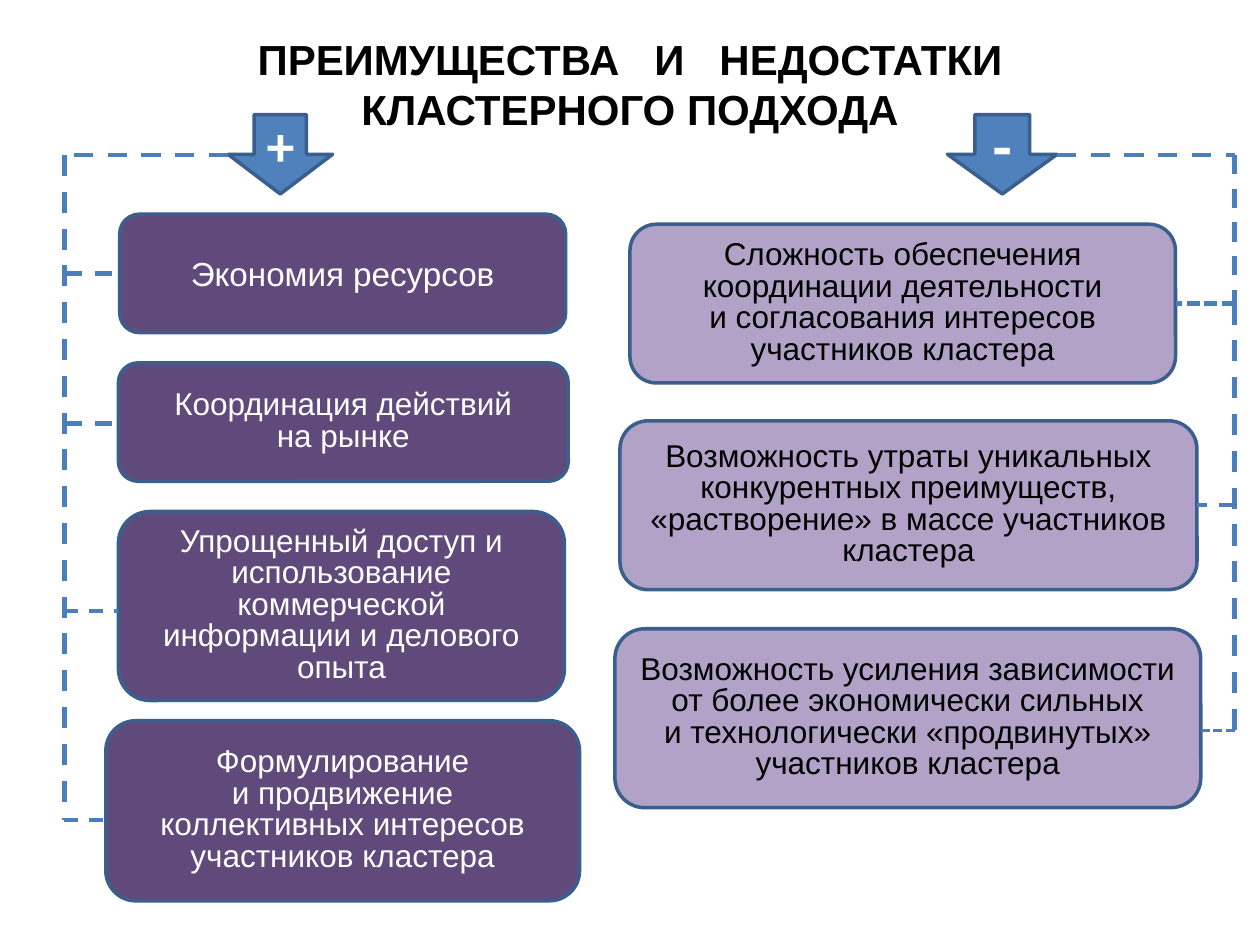
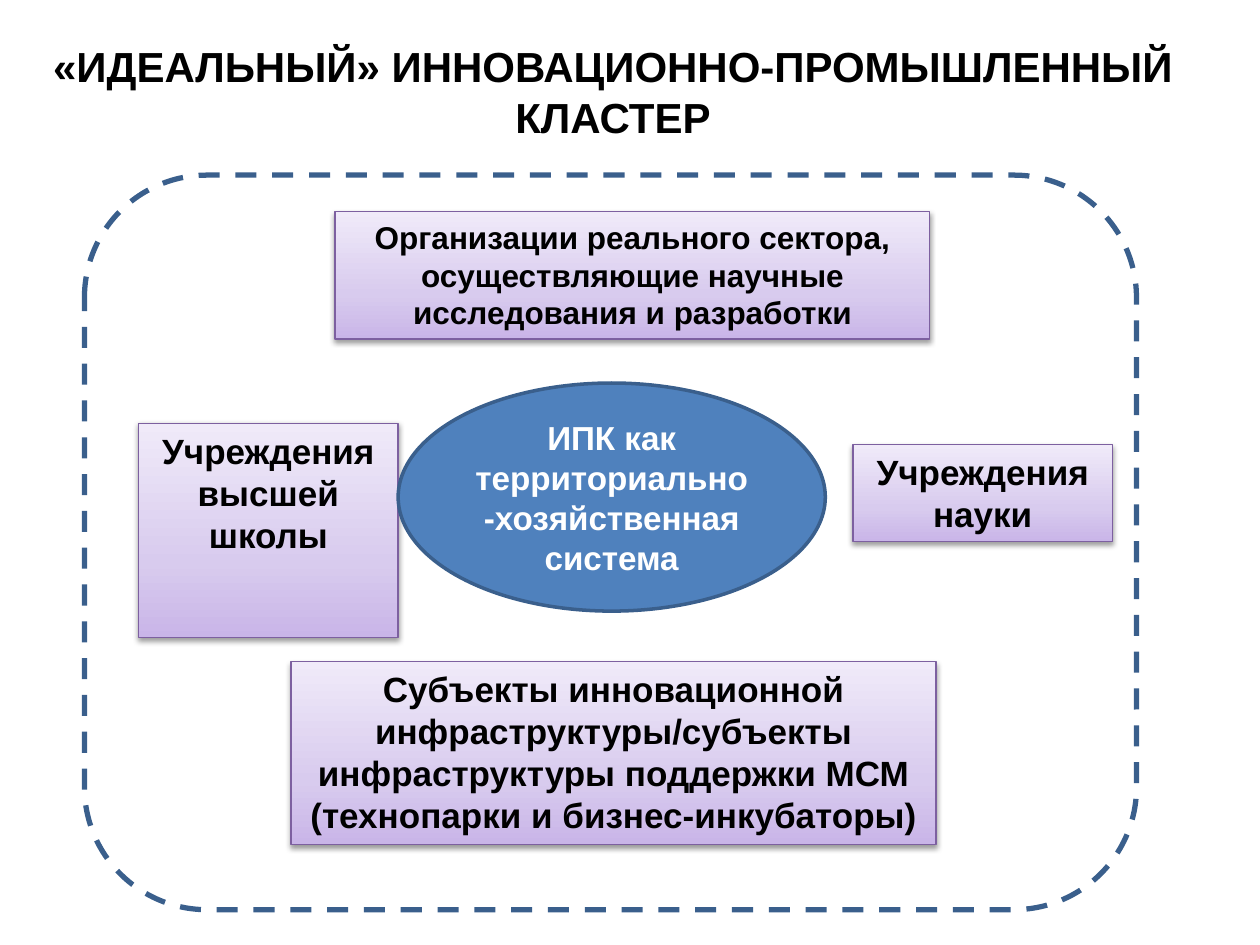
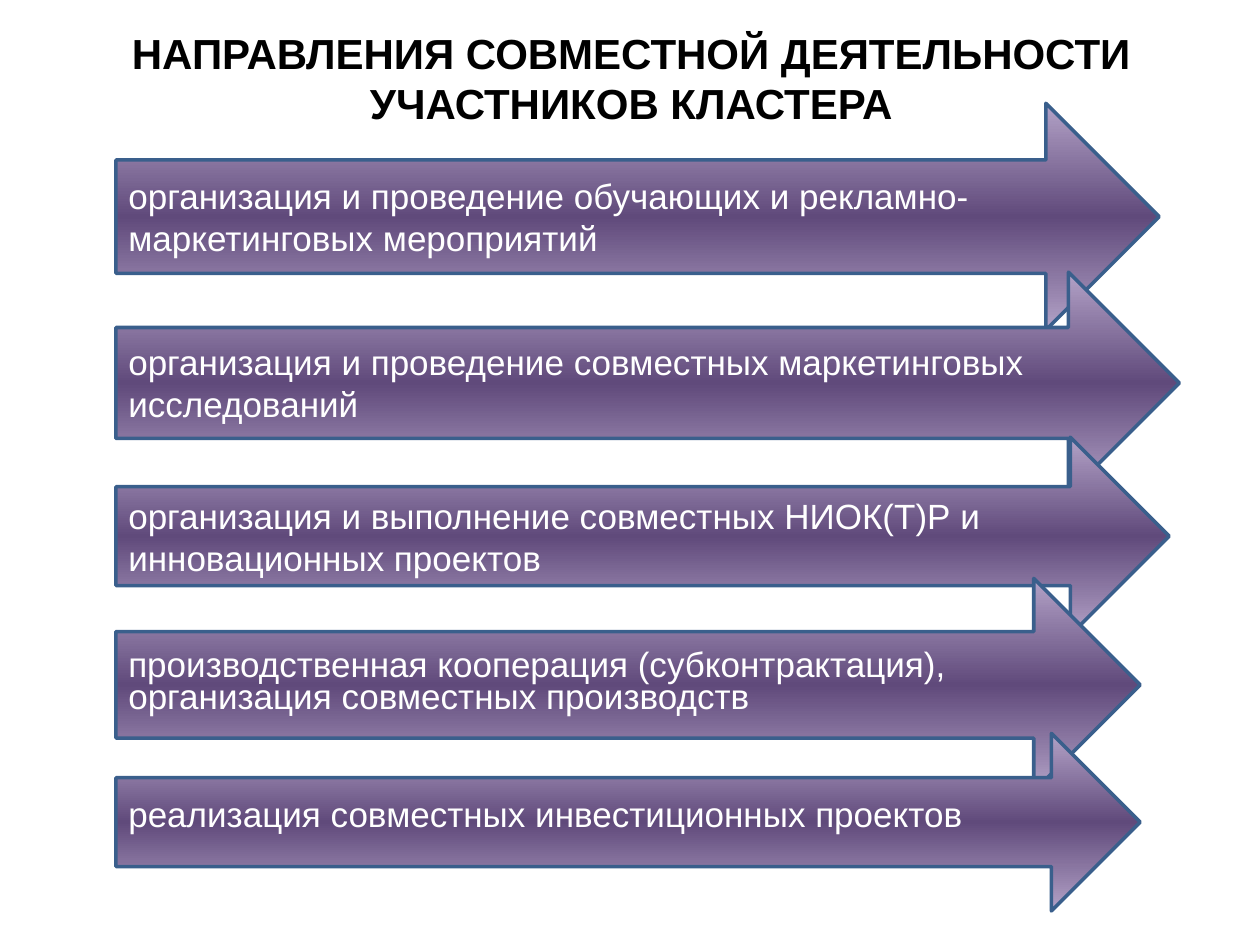
"""Build three slides on the advantages, structure and activities of clusters."""
from lxml import etree
from pptx import Presentation
from pptx.dml.color import RGBColor
from pptx.enum.dml import MSO_LINE
from pptx.enum.shapes import MSO_CONNECTOR, MSO_SHAPE
from pptx.enum.text import MSO_ANCHOR, MSO_AUTO_SIZE, PP_ALIGN
from pptx.oxml.ns import qn
from pptx.util import Inches, Pt

ROUNDED, RECTANGLE, ELLIPSE = MSO_SHAPE.ROUNDED_RECTANGLE, MSO_SHAPE.RECTANGLE, MSO_SHAPE.OVAL
DOWN_ARROW, RIGHT_ARROW = MSO_SHAPE.DOWN_ARROW, MSO_SHAPE.RIGHT_ARROW
STRAIGHT = MSO_CONNECTOR.STRAIGHT
DASH, SHORT_DASH = MSO_LINE.DASH, MSO_LINE.SQUARE_DOT
LEFT, CENTER = PP_ALIGN.LEFT, PP_ALIGN.CENTER
TOP, MIDDLE = MSO_ANCHOR.TOP, MSO_ANCHOR.MIDDLE

BLACK, WHITE = "000000", "FFFFFF"
BLUE, BLUE_OUTLINE, BLUE_LINE = "4F81BD", "3A5F8C", "4B7EBC"
PURPLE, LILAC, PURPLE_OUTLINE = "604A7B", "B3A2C7", "7D60A0"
CARD_GRADIENT = [(0, "C9B5E8"), (35, "D8CBEE"), (100, "F0EAF9")]
ARROW_GRADIENT = [(0, LILAC), (50, PURPLE), (100, LILAC)]


def paint(shape, fill, outline=BLUE_OUTLINE, width=2):
    """Fill a shape with a colour, gradient stops or nothing, and outline it."""
    shape.shadow.inherit = False
    if fill is None:
        shape.fill.background()
    elif isinstance(fill, str):
        shape.fill.solid()
        shape.fill.fore_color.rgb = RGBColor.from_string(fill)
    else:
        shape.fill.gradient()
        shape.fill.gradient_angle = 90
        stops = shape._element.spPr.find(".//" + qn("a:gsLst"))
        for stop in list(stops):
            stops.remove(stop)
        for position, colour in fill:
            stop = etree.SubElement(stops, qn("a:gs"), pos=str(position * 1000))
            etree.SubElement(stop, qn("a:srgbClr"), val=colour)
    shape.line.color.rgb = RGBColor.from_string(outline)
    shape.line.width = Pt(width)


def style_text(shape, size, colour, bold=False, align=CENTER, spacing=None, anchor=MIDDLE, font="Arial"):
    """Format all the text of a shape alike."""
    frame = shape.text_frame
    frame.word_wrap = True
    frame.auto_size = MSO_AUTO_SIZE.NONE
    frame.vertical_anchor = anchor
    for paragraph in frame.paragraphs:
        paragraph.alignment = align
        paragraph.space_before = Pt(0)
        if spacing:
            paragraph.line_spacing = Pt(spacing)
        for run in paragraph.runs:
            run.font.name = font
            run.font.size = Pt(size)
            run.font.bold = bold
            run.font.color.rgb = RGBColor.from_string(colour)


presentation = Presentation()
presentation.slide_width, presentation.slide_height = Inches(10), Inches(7.5)

slides = []
for layout_index, title_box, title_text in [
    (5, (0.59, 0.21, 8.82, 0.91), "ПРЕИМУЩЕСТВА\nКЛАСТЕРНОГО ПОДХОДА"),
    (1, (0.23, 0.21, 9.27, 1.03), "«ИДЕАЛЬНЫЙ» ИННОВАЦИОННО-ПРОМЫШЛЕННЫЙ КЛАСТЕР"),
    (5, (0.15, 0.16, 9.72, 0.91), "НАПРАВЛЕНИЯ СОВМЕСТНОЙ ДЕЯТЕЛЬНОСТИ УЧАСТНИКОВ КЛАСТЕРА"),
]:
    slide = presentation.slides.add_slide(presentation.slide_layouts[layout_index])
    title = slide.shapes.title
    title.left, title.top, title.width, title.height = map(Inches, title_box)
    title.text_frame.text = title_text
    slides.append(slide)
balance_slide, cluster_slide, activity_slide = slides

for text in (" ", "И", " ", "НЕДОСТАТКИ"):
    run = balance_slide.shapes.title.text_frame.paragraphs[0].add_run()
    run.text = text
    if text == " ":
        run._r.get_or_add_rPr().set("spc", "1330")
for slide in slides:
    style_text(slide.shapes.title, 24, BLACK, bold=True)

advantages = [
    ((0.95, 1.7, 3.54, 0.94), 19, None, (2.17, 2.5, DASH), "Экономия ресурсов"),
    ((0.94, 2.88, 3.57, 0.94), 18, 18, (3.36, 2.5, DASH), "Координация действий\nна рынке"),
    ((0.94, 4.06, 3.54, 1.5), 18, 18, (4.85, 2, DASH),
     "Упрощенный доступ и использование коммерческой информации и делового опыта"),
    ((0.84, 5.72, 3.76, 1.43), 18, 18, (6.51, 2, DASH),
     "Формулирование\nи продвижение коллективных интересов участников кластера"),
]
drawbacks = [
    ((5, 1.78, 4.33, 1.26), 18, 18, (2.41, 2.5, SHORT_DASH),
     "Сложность обеспечения координации деятельности\nи согласования интересов участников кластера"),
    ((4.92, 3.34, 4.58, 1.34), 18, 18, (4.01, 2.25, DASH),
     "Возможность утраты уникальных конкурентных преимуществ, «растворение» в массе участников кластера"),
    ((4.88, 4.99, 4.65, 1.42), 18, 18, (5.8, 1.75, SHORT_DASH),
     "Возможность усиления зависимости от более экономически сильных\n"
     "и технологически «продвинутых» участников кластера"),
]
TRUNK_TOP = 1.23
for cards, fill, colour, trunk_x, edge, trunk_parts, arrow_left, arrow_width, sign, sign_size in [
    (advantages, PURPLE, WHITE, 0.51, 0, [(6.51, 3)], 1.81, 0.83, "+", 32),
    (drawbacks, LILAC, BLACK, 9.8, 1, [(2.41, 2.75), (5.8, 3)], 7.52, 0.87, "-", 36),
]:
    lines = [(arrow_left + edge * arrow_width, TRUNK_TOP, trunk_x, TRUNK_TOP, 2.75, DASH)]
    part_top = TRUNK_TOP
    for part_bottom, width in trunk_parts:
        lines.append((trunk_x, part_top, trunk_x, part_bottom, width, DASH))
        part_top = part_bottom

    for box, size, spacing, (branch_y, width, dash), text in cards:
        card = balance_slide.shapes.add_shape(ROUNDED, *map(Inches, box))
        card.text_frame.text = text
        paint(card, fill)
        style_text(card, size, colour, spacing=spacing)
        lines.append((trunk_x, branch_y, box[0] + edge * box[2], branch_y, width, dash))

    arrow = balance_slide.shapes.add_shape(
        DOWN_ARROW, Inches(arrow_left), Inches(0.91), Inches(arrow_width), Inches(0.63))
    arrow.text_frame.text = sign
    paint(arrow, BLUE)
    style_text(arrow, sign_size, WHITE, bold=True, font="Calibri")

    for *ends, width, dash in lines:
        connector = balance_slide.shapes.add_connector(STRAIGHT, *map(Inches, ends))
        connector.line.color.rgb = RGBColor.from_string(BLUE_LINE)
        connector.line.width = Pt(width)
        connector.line.dash_style = dash
        etree.SubElement(connector._element.spPr, qn("a:effectLst"))

universities = cluster_slide.placeholders[1]
universities.left, universities.top, universities.width, universities.height = map(
    Inches, (1.1, 3.36, 2.06, 1.7))
universities.text_frame.text = "Учреждения высшей школы"
properties = universities.text_frame.paragraphs[0]._p.get_or_add_pPr()
properties.set("marL", "0")
properties.set("indent", "0")
etree.SubElement(properties, qn("a:buNone"))

members = [(universities, 20)]
for box, size, text in [
    ((2.66, 1.68, 4.72, 1.01), 18,
     "Организации реального сектора, осуществляющие научные исследования и разработки"),
    ((6.77, 3.53, 2.06, 0.77), 20, "Учреждения науки"),
    ((2.31, 5.25, 5.12, 1.45), 20,
     "Субъекты инновационной инфраструктуры/субъекты инфраструктуры поддержки МСМ "
     "(технопарки и бизнес-инкубаторы)"),
]:
    member = cluster_slide.shapes.add_shape(RECTANGLE, *map(Inches, box))
    member.text_frame.text = text
    members.append((member, size))
for member, size in members:
    paint(member, CARD_GRADIENT, PURPLE_OUTLINE, 0.75)
    style_text(member, size, BLACK, bold=True, anchor=TOP)
    effects = member._element.spPr.find(qn("a:effectLst"))
    shadow = etree.SubElement(effects, qn("a:outerShdw"), blurRad="40000", dist="20000",
                              dir="5400000", rotWithShape="0")
    shadow_colour = etree.SubElement(shadow, qn("a:srgbClr"), val=BLACK)
    etree.SubElement(shadow_colour, qn("a:alpha"), val="38000")

core = cluster_slide.shapes.add_shape(ELLIPSE, *map(Inches, (3.16, 3.04, 3.39, 1.81)))
core.text_frame.text = "ИПК как территориально-хозяйственная система"
paint(core, BLUE)
style_text(core, 19, WHITE, bold=True)

boundary = cluster_slide.shapes.add_shape(ROUNDED, *map(Inches, (0.67, 1.39, 8.35, 5.83)))
paint(boundary, None, width=3)
boundary.line.dash_style = DASH

for top, width, height, spacing, text in [
    (0.82, 8.28, 1.8, None, "организация и проведение обучающих и рекламно-маркетинговых мероприятий"),
    (2.16, 8.44, 1.76, None, "организация и проведение совместных маркетинговых исследований"),
    (3.47, 8.36, 1.57, None, "организация и выполнение совместных НИОК(Т)Р и инновационных проектов"),
    (4.59, 8.13, 1.69, 18, "производственная кооперация (субконтрактация), организация совместных производств"),
    (5.82, 8.13, 1.41, 14, "реализация совместных инвестиционных проектов"),
]:
    activity = activity_slide.shapes.add_shape(
        RIGHT_ARROW, Inches(0.92), Inches(top), Inches(width), Inches(height))
    activity.text_frame.text = text
    paint(activity, ARROW_GRADIENT)
    style_text(activity, 20, WHITE, align=LEFT, spacing=spacing)

presentation.save("out.pptx")
